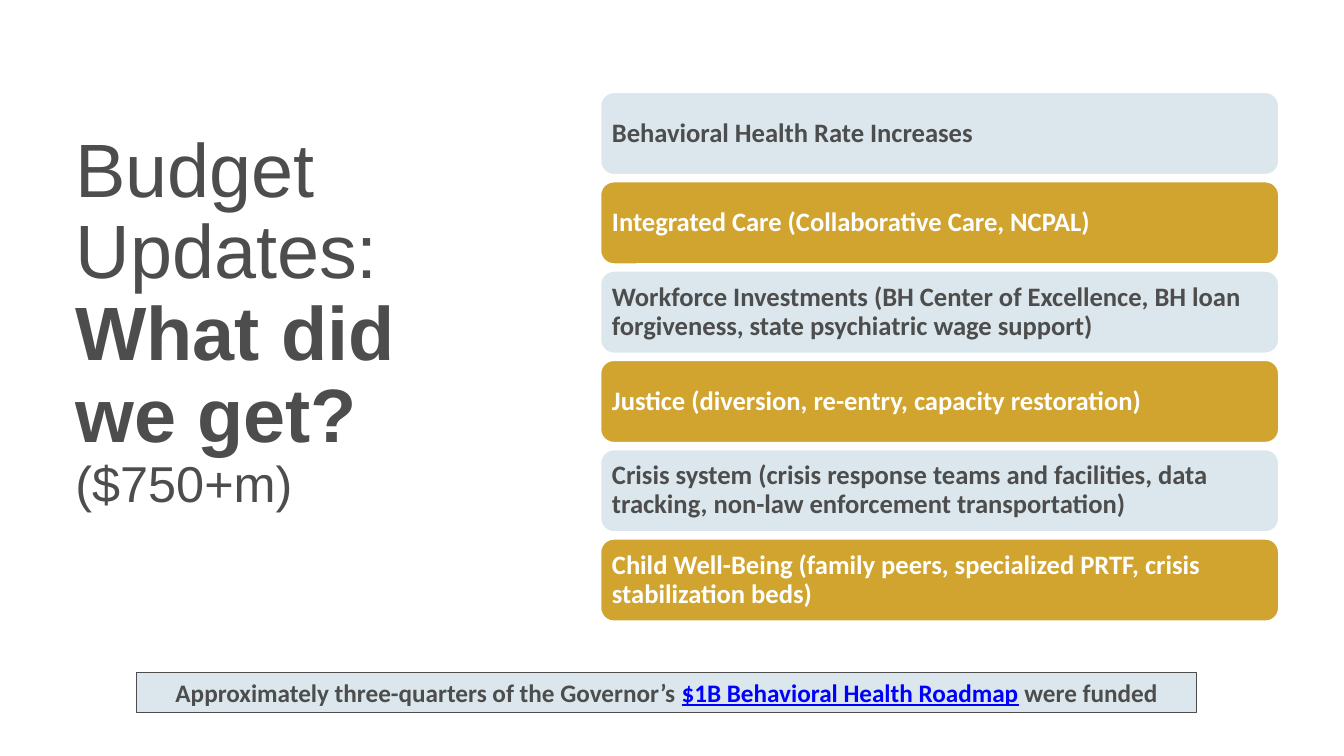
from pptx import Presentation
from pptx.dml.color import RGBColor
from pptx.enum.shapes import MSO_SHAPE
from pptx.enum.text import MSO_ANCHOR, PP_ALIGN
from pptx.util import Inches, Pt

ROUNDED, RECTANGLE = MSO_SHAPE.ROUNDED_RECTANGLE, MSO_SHAPE.RECTANGLE
MIDDLE = MSO_ANCHOR.MIDDLE
LEFT, CENTER = PP_ALIGN.LEFT, PP_ALIGN.CENTER

WHITE = RGBColor(0xFF, 0xFF, 0xFF)
CHARCOAL = RGBColor(0x4C, 0x4D, 0x4C)
PALE_BLUE = RGBColor(0xDB, 0xE7, 0xEC)
GOLD = RGBColor(0xD1, 0xA4, 0x30)
LINK_BLUE = RGBColor(0x00, 0x00, 0xFF)

TITLE_BOX = (0.65, 1.01, 3.83, 5.01)
INVESTMENTS_BOX = (5.95, 0.91, 6.74, 5.26)
FUNDING_BOX = (1.35, 6.67, 10.52, 0.4)

CARD_HEIGHT = 0.83
TITLE_LIFT = 0.68

TITLE_LINES = [
    ("Budget Updates: ", 54, False),
    ("What did ", 54, True),
    ("we get?", 54, True),
    ("($750+m)", 36, False),
]
INVESTMENTS = [
    "Behavioral Health Rate Increases",
    "Integrated Care (Collaborative Care, NCPAL)",
    "Workforce Investments (BH Center of Excellence, BH loan forgiveness, "
    "state psychiatric wage support)",
    "Justice (diversion, re-entry, capacity restoration)",
    "Crisis system (crisis response teams and facilities, data tracking, "
    "non-law enforcement transportation)",
    "Child Well-Being (family peers, specialized PRTF, crisis stabilization beds)",
]
CARD_COLORS = [(PALE_BLUE, CHARCOAL), (GOLD, WHITE)]
FUNDING_NOTE = [
    ("Approximately three-quarters of the Governor’s ", CHARCOAL, False),
    ("$1B Behavioral Health Roadmap", LINK_BLUE, True),
    (" were funded", CHARCOAL, False),
]


def add_run(paragraph, text, font_name, size, color, bold=True, underline=False):
    """Add one formatted run to a paragraph."""
    run = paragraph.add_run()
    run.text = text
    font = run.font
    font.name, font.size, font.bold = font_name, Pt(size), bold
    font.underline = underline
    font.color.rgb = color


def add_panel(slide, kind, box, fill, outline, outline_width, alignment):
    """Add a filled, outlined panel and return its text frame."""
    panel = slide.shapes.add_shape(kind, *map(Inches, box))
    panel.shadow.inherit = False
    panel.fill.solid()
    panel.fill.fore_color.rgb = fill
    panel.line.color.rgb = outline
    panel.line.width = Pt(outline_width)
    frame = panel.text_frame
    frame.word_wrap = True
    frame.vertical_anchor = MIDDLE
    frame.paragraphs[0].alignment = alignment
    return frame


def add_title(slide, box):
    """Place the headline, raised slightly above the middle of its box."""
    frame = slide.shapes.add_textbox(*map(Inches, box)).text_frame
    frame.word_wrap = True
    frame.vertical_anchor = MIDDLE
    frame.margin_bottom = Inches(TITLE_LIFT)
    headline = frame.paragraphs[0]
    headline.line_spacing = 0.9
    for index, (text, size, bold) in enumerate(TITLE_LINES):
        if index:
            headline.add_line_break()
        add_run(headline, text, "Arial", size, CHARCOAL, bold)


def add_investments(slide, box):
    """Stack the investment cards evenly, alternating their colours."""
    left, top, width, height = box
    pitch = (height - CARD_HEIGHT) / (len(INVESTMENTS) - 1)
    for index, investment in enumerate(INVESTMENTS):
        fill, text_color = CARD_COLORS[index % len(CARD_COLORS)]
        card_box = (left, top + index * pitch, width, CARD_HEIGHT)
        frame = add_panel(slide, ROUNDED, card_box, fill, WHITE, 2, LEFT)
        frame.margin_left = frame.margin_right = Inches(0.08)
        frame.margin_top = frame.margin_bottom = Inches(0.08)
        label = frame.paragraphs[0]
        label.line_spacing = 0.9
        add_run(label, investment, "Calibri", 19, text_color)


def add_funding_note(slide, box):
    """Place the outlined funding note along the bottom."""
    frame = add_panel(slide, RECTANGLE, box, PALE_BLUE, CHARCOAL, 0.75, CENTER)
    for text, color, underline in FUNDING_NOTE:
        add_run(frame.paragraphs[0], text, "Calibri", 18, color, underline=underline)


def main():
    """Build and save the budget slide."""
    deck = Presentation()
    deck.slide_width, deck.slide_height = Inches(13.33), Inches(7.5)
    slide = deck.slides.add_slide(deck.slide_layouts[6])
    add_title(slide, TITLE_BOX)
    add_investments(slide, INVESTMENTS_BOX)
    add_funding_note(slide, FUNDING_BOX)
    deck.save("out.pptx")


if __name__ == "__main__":
    main()
